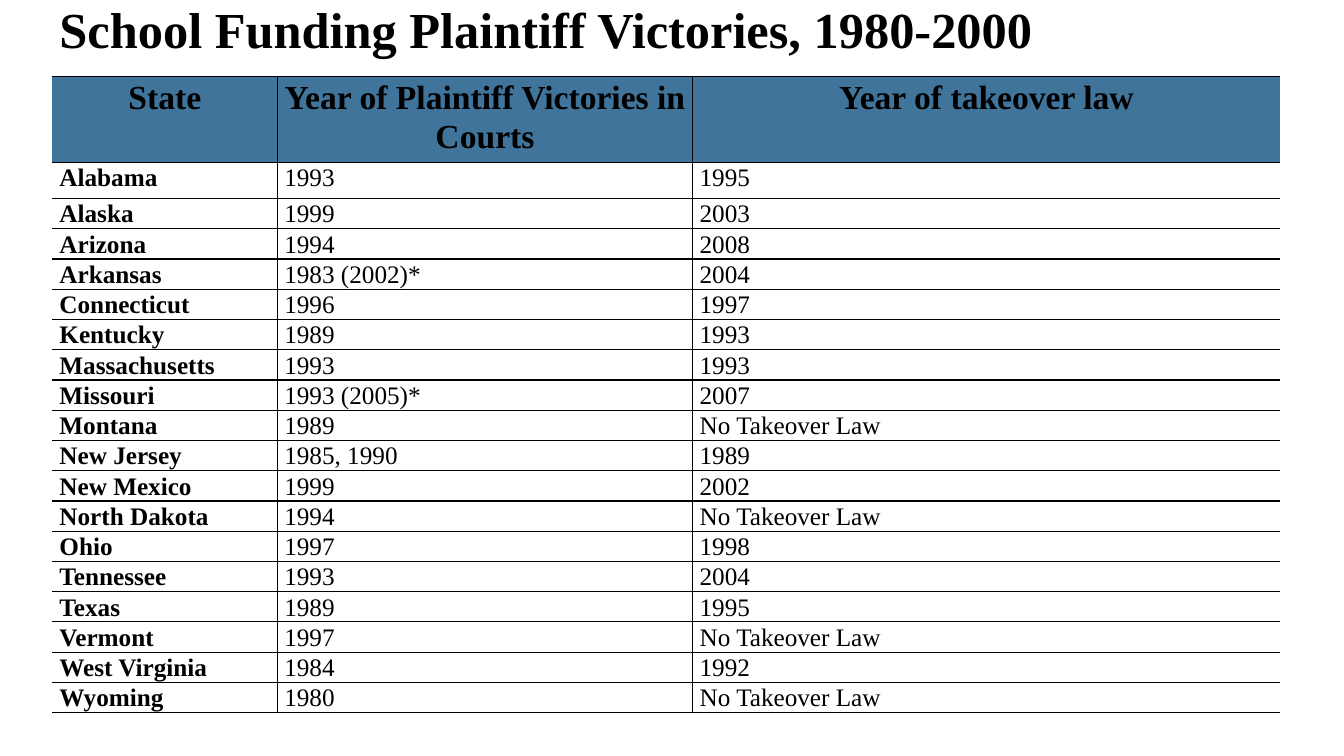
from lxml.etree import SubElement
from pptx import Presentation
from pptx.dml.color import RGBColor
from pptx.enum.text import PP_ALIGN
from pptx.oxml.ns import qn
from pptx.util import Inches, Pt

TITLE = "School Funding Plaintiff Victories, 1980-2000"
HEADERS = ["State", "Year of Plaintiff Victories in Courts", "Year of takeover law"]
STATES = [
    ("Alabama", "1993", "1995"),
    ("Alaska", "1999", "2003"),
    ("Arizona", "1994", "2008"),
    ("Arkansas", "1983 (2002)*", "2004"),
    ("Connecticut", "1996", "1997"),
    ("Kentucky", "1989", "1993"),
    ("Massachusetts", "1993", "1993"),
    ("Missouri", "1993 (2005)*", "2007"),
    ("Montana", "1989", "No Takeover Law"),
    ("New Jersey", "1985, 1990", "1989"),
    ("New Mexico", "1999", "2002"),
    ("North Dakota", "1994", "No Takeover Law"),
    ("Ohio", "1997", "1998"),
    ("Tennessee", "1993", "2004"),
    ("Texas", "1989", "1995"),
    ("Vermont", "1997", "No Takeover Law"),
    ("West Virginia", "1984", "1992"),
    ("Wyoming", "1980", "No Takeover Law"),
]
COLUMN_WIDTHS = [2.23, 4.12, 5.83]
ROW_HEIGHTS = [0.76, 0.85, 0.36] + [0.3] * (len(STATES) - 1)
COLUMN_BORDERS = ["RTB", "LRTB", "LTB"]


def color(value):
    return RGBColor.from_string(value)


def write_text(frame, text, size=18, bold=False, align=PP_ALIGN.LEFT,
               font="Times New Roman", ink="000000"):
    paragraph = frame.paragraphs[0]
    paragraph.alignment = align
    paragraph.line_spacing = 1.07
    run = paragraph.add_run()
    run.text = text
    run.font.name = font
    run.font.size = Pt(size)
    run.font.bold = bold
    run.font.color.rgb = color(ink)


class SlideBuilder:
    header_fill = "40749B"
    border_color = "000000"
    border_width = Pt(1)

    def __init__(self, slide):
        self.slide = slide

    def table(self, left, top, widths, heights):
        shape = self.slide.shapes.add_table(
            len(heights), len(widths), Inches(left), Inches(top),
            Inches(sum(widths)), Inches(sum(heights)))
        table = shape.table
        table.first_row = False
        table.horz_banding = False
        for column, width in zip(table.columns, widths):
            column.width = Inches(width)
        for row, height in zip(table.rows, heights):
            row.height = Inches(height)
        return table

    def borders(self, cell, sides):
        properties = cell._tc.get_or_add_tcPr()
        for side in "LRTB":
            line = SubElement(properties, qn(f"a:ln{side}"), w=str(self.border_width))
            if side in sides:
                fill = SubElement(line, qn("a:solidFill"))
                SubElement(fill, qn("a:srgbClr"), val=self.border_color)
            else:
                SubElement(line, qn("a:noFill"))

    def cell(self, cell, sides, text="", fill=None, **text_format):
        cell.margin_left = cell.margin_right = Inches(0.07)
        cell.margin_top = cell.margin_bottom = 0
        self.borders(cell, sides)
        if fill:
            cell.fill.solid()
            cell.fill.fore_color.rgb = color(fill)
        else:
            cell.fill.background()
        if text:
            write_text(cell.text_frame, text, **text_format)


def main():
    presentation = Presentation()
    presentation.slide_width = Inches(13.33)
    presentation.slide_height = Inches(7.5)
    builder = SlideBuilder(presentation.slides.add_slide(presentation.slide_layouts[6]))

    table = builder.table(0.52, 0, COLUMN_WIDTHS, ROW_HEIGHTS)
    table.cell(0, 0).merge(table.cell(0, 2))
    for column, text in enumerate([TITLE, "", ""]):
        builder.cell(table.cell(0, column), "B", text, size=36, bold=True)
    for column, text in enumerate(HEADERS):
        builder.cell(table.cell(1, column), COLUMN_BORDERS[column], text,
                     fill=builder.header_fill, size=24, bold=True, align=PP_ALIGN.CENTER)
    for row, state in enumerate(STATES, start=2):
        for column, text in enumerate(state):
            builder.cell(table.cell(row, column), COLUMN_BORDERS[column], text,
                         bold=column == 0)

    presentation.save("out.pptx")


if __name__ == "__main__":
    main()
